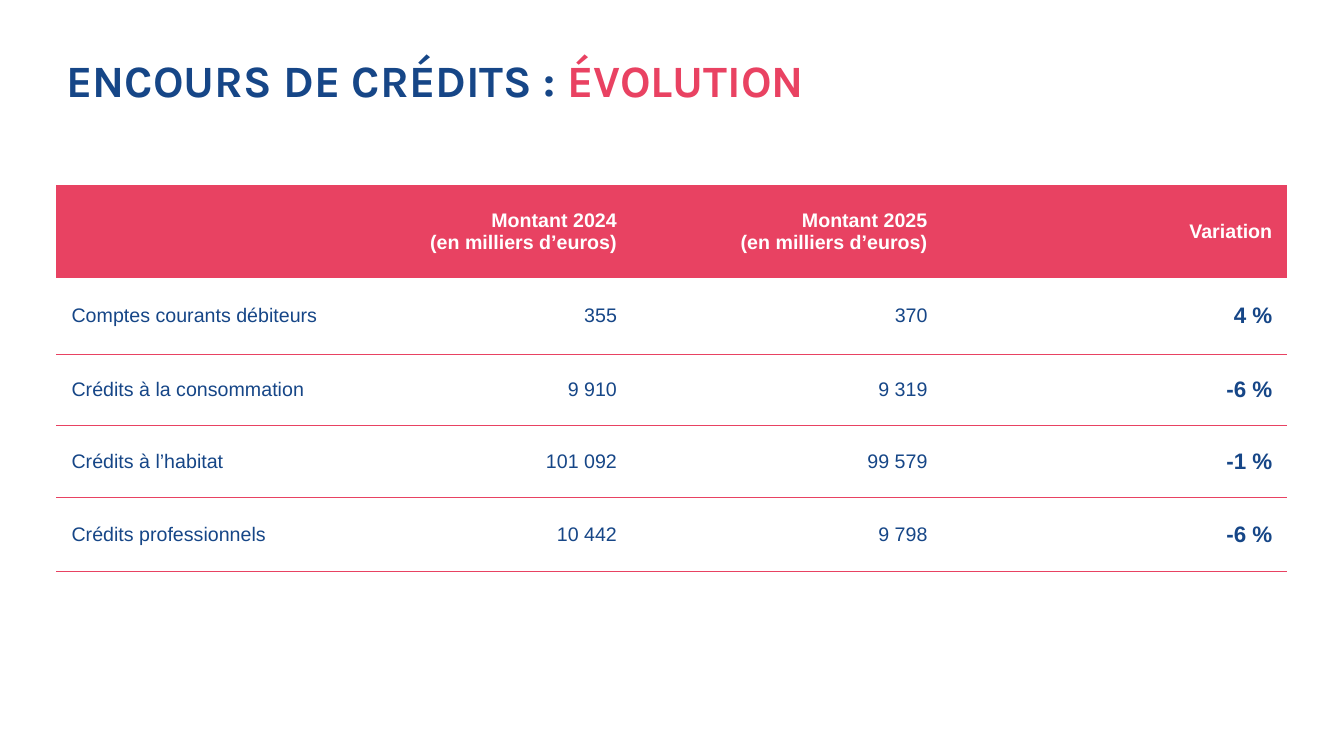
import pptx
import pptx.util
import pptx.dml.color
import pptx.enum.text
import pptx.oxml
import pptx.oxml.ns

PX = 9144  # 100 px to the inch
THEME = {
    "blue": "164687", "rose": "E94262", "band": "E84262", "white": "FFFFFF",
    "head": "Karla", "body": "Arial",
    "title": 32, "text": 14, "rate": 16,
}
ALIGN = pptx.enum.text.PP_ALIGN
MIDDLE = pptx.enum.text.MSO_ANCHOR.MIDDLE


def style(font, face, size, color, bold):
    font.name = THEME[face]
    font.size = pptx.util.Pt(THEME[size])
    font.color.rgb = pptx.dml.color.RGBColor.from_string(THEME[color])
    font.bold = bold


def rule(cell):
    """Draw lines above and below the cell, and none at its sides."""
    line = f'<a:solidFill><a:srgbClr val="{THEME["band"]}"/></a:solidFill>'
    for side in "LRTB":
        paint = line if side in "TB" else "<a:noFill/>"
        cell._tc.get_or_add_tcPr().append(pptx.oxml.parse_xml(
            f'<a:ln{side} {pptx.oxml.ns.nsdecls("a")} w="12700">{paint}</a:ln{side}>'))


deck = pptx.Presentation()
deck.slide_width, deck.slide_height = 1333 * PX, 750 * PX
slide = deck.slides.add_slide(deck.slide_layouts[5])

title = slide.shapes.title
title.left, title.top, title.width, title.height = [n * PX for n in (56, 52, 1220, 61)]
frame = title.text_frame
frame.auto_size = pptx.enum.text.MSO_AUTO_SIZE.NONE
frame.word_wrap = True
frame.vertical_anchor = MIDDLE
para = frame.paragraphs[0]
para.alignment = ALIGN.LEFT
para.line_spacing = 0.9
for words, color in (("ENCOURS DE CRÉDITS : ", "blue"), ("ÉVOLUTION", "rose")):
    run = para.add_run()
    run.text = words
    style(run.font, "head", "title", color, True)

ROWS = [
    ("", "Montant 2024\n(en milliers d’euros)", "Montant 2025\n(en milliers d’euros)", "Variation"),
    ("Comptes courants débiteurs", "355", "370", "4 %"),
    ("Crédits à la consommation", "9 910", "9 319", "-6 %"),
    ("Crédits à l’habitat", "101 092", "99 579", "-1 %"),
    ("Crédits professionnels", "10 442", "9 798", "-6 %"),
]
WIDTHS = (277, 294, 308, 342)
HEIGHTS = (91, 77, 70, 72, 73)

table = slide.shapes.add_table(
    len(ROWS), len(WIDTHS), 56 * PX, 184 * PX, sum(WIDTHS) * PX, sum(HEIGHTS) * PX).table
table.horz_banding = False
for col, width in zip(table.columns, WIDTHS):
    col.width = width * PX
for row, height in zip(table.rows, HEIGHTS):
    row.height = height * PX

for r, row in enumerate(ROWS):
    for c, words in enumerate(row):
        cell = table.cell(r, c)
        rule(cell)
        if r == 0:
            cell.fill.solid()
            cell.fill.fore_color.rgb = pptx.dml.color.RGBColor.from_string(THEME["band"])
        else:
            cell.fill.background()
        cell.margin_left = cell.margin_right = 15 * PX
        cell.margin_top = cell.margin_bottom = 15 * PX
        cell.vertical_anchor = MIDDLE
        cell.text = words
        rate = r > 0 and c == 3
        for para in cell.text_frame.paragraphs:
            para.alignment = ALIGN.RIGHT if c else ALIGN.LEFT
            style(para.font, "body", "rate" if rate else "text",
                  "blue" if r else "white", r == 0 or rate)

deck.save("out.pptx")
